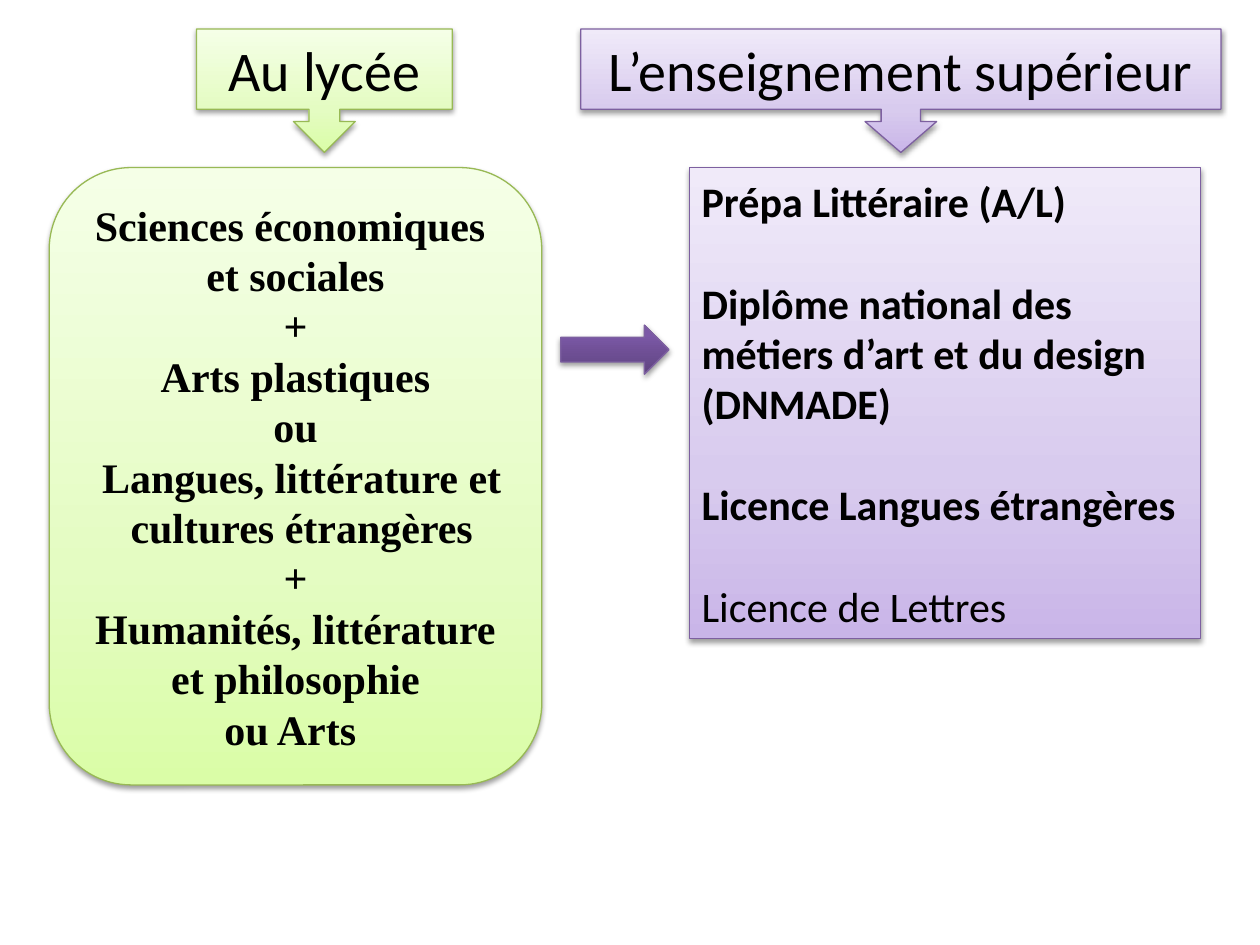
"""Build the slide that links lycée courses to higher education paths."""
import copy

import pptx
import pptx.dml.color
import pptx.enum.shapes
import pptx.enum.text
import pptx.oxml
import pptx.oxml.ns
import pptx.util

Inches = pptx.util.Inches
Pt = pptx.util.Pt
kinds = pptx.enum.shapes.MSO_SHAPE
align = pptx.enum.text.PP_ALIGN
qn = pptx.oxml.ns.qn


def paint(hue):
    return pptx.dml.color.RGBColor.from_string(hue)


green = {"line": "98B955", "stops": [(0, "DAFDA7"), (0.35, "E4FCC2"), (1, "F5FFE7")]}
mauve = {"line": "7D60A0", "stops": [(0, "C9B5E8"), (0.35, "D8CBEE"), (1, "F0EAF9")]}
deep = {"line": "7D60A0", "stops": [(0, "5F4480"), (0.8, "7B58A6"), (1, "7C57A8")]}

head = {"name": "Calibri", "size": Pt(32), "bold": False}
serif = {"name": "Times New Roman", "size": Pt(24), "bold": True}
sans = {"name": "Calibri", "size": Pt(24), "bold": True}
plain = {**sans, "bold": False}

school = [
    "Sciences économiques ", "et sociales", "+", "Arts plastiques", "ou",
    "Langues, littérature et cultures étrangères", "+",
    "Humanités, littérature et philosophie", "ou Arts ",
]
paths = [
    "Prépa Littéraire (A/L)",
    "Diplôme national des métiers d’art et du design (DNMADE)",
    "Licence Langues étrangères",
]

items = [
    {"kind": kinds.ROUNDED_RECTANGLE, "box": (0.39, 1.33, 3.91, 4.9), "look": green,
     "text": [(line, serif) for line in school], "align": align.CENTER},
    {"kind": kinds.DOWN_ARROW_CALLOUT, "box": (1.56, 0.23, 2.03, 0.98), "look": green,
     "text": [("Au lycée", head)], "align": align.CENTER},
    {"kind": kinds.DOWN_ARROW_CALLOUT, "box": (4.61, 0.23, 5.08, 0.98), "look": mauve,
     "text": [("L’enseignement supérieur", head)], "align": align.CENTER,
     "adjust": (0.32, 0.29, 0.25, 0.65)},
    {"kind": kinds.RECTANGLE, "box": (5.47, 1.33, 4.06, 3.74), "look": mauve,
     "text": [(line, sans) for line in paths] + [("Licence de Lettres", plain)],
     "align": align.LEFT, "gap": Pt(29)},
    {"kind": kinds.RIGHT_ARROW, "box": (4.45, 2.58, 0.86, 0.39), "look": deep, "text": []},
]

deck = pptx.Presentation()
deck.slide_width, deck.slide_height = Inches(10), Inches(7.5)
slide = deck.slides.add_slide(deck.slide_layouts[6])

for item in items:
    shape = slide.shapes.add_shape(item["kind"], *map(Inches, item["box"]))
    for spot, value in enumerate(item.get("adjust", ())):
        shape.adjustments[spot] = value

    look = item["look"]
    shape.line.color.rgb = paint(look["line"])
    shape.line.width = Pt(0.75)
    shape.fill.gradient()
    shape.fill.gradient_angle = 90
    props = shape._element.spPr
    ramp = props.find(qn("a:gradFill")).find(qn("a:gsLst"))
    ramp.insert(1, copy.deepcopy(ramp[0]))
    for stop, (place, hue) in zip(shape.fill.gradient_stops, look["stops"]):
        stop.position = place
        stop.color.rgb = paint(hue)

    shape.shadow.inherit = False
    props.find(qn("a:effectLst")).append(pptx.oxml.parse_xml(
        '<a:outerShdw xmlns:a="http://schemas.openxmlformats.org/drawingml/2006/main" '
        'blurRad="40000" dist="20000" dir="5400000" rotWithShape="0">'
        '<a:srgbClr val="000000"><a:alpha val="38000"/></a:srgbClr></a:outerShdw>'))

    frame = shape.text_frame
    frame.word_wrap = True
    for spot, (words, style) in enumerate(item["text"]):
        para = frame.add_paragraph() if spot else frame.paragraphs[0]
        para.alignment = item["align"]
        if spot and "gap" in item:
            para.space_before = item["gap"]
        if words.startswith("Langues"):
            para._p.get_or_add_pPr().set("marL", str(Inches(0.1)))
        run = para.add_run()
        run.text = words
        run.font.color.rgb = paint("000000")
        for key, value in style.items():
            setattr(run.font, key, value)

deck.save("out.pptx")
